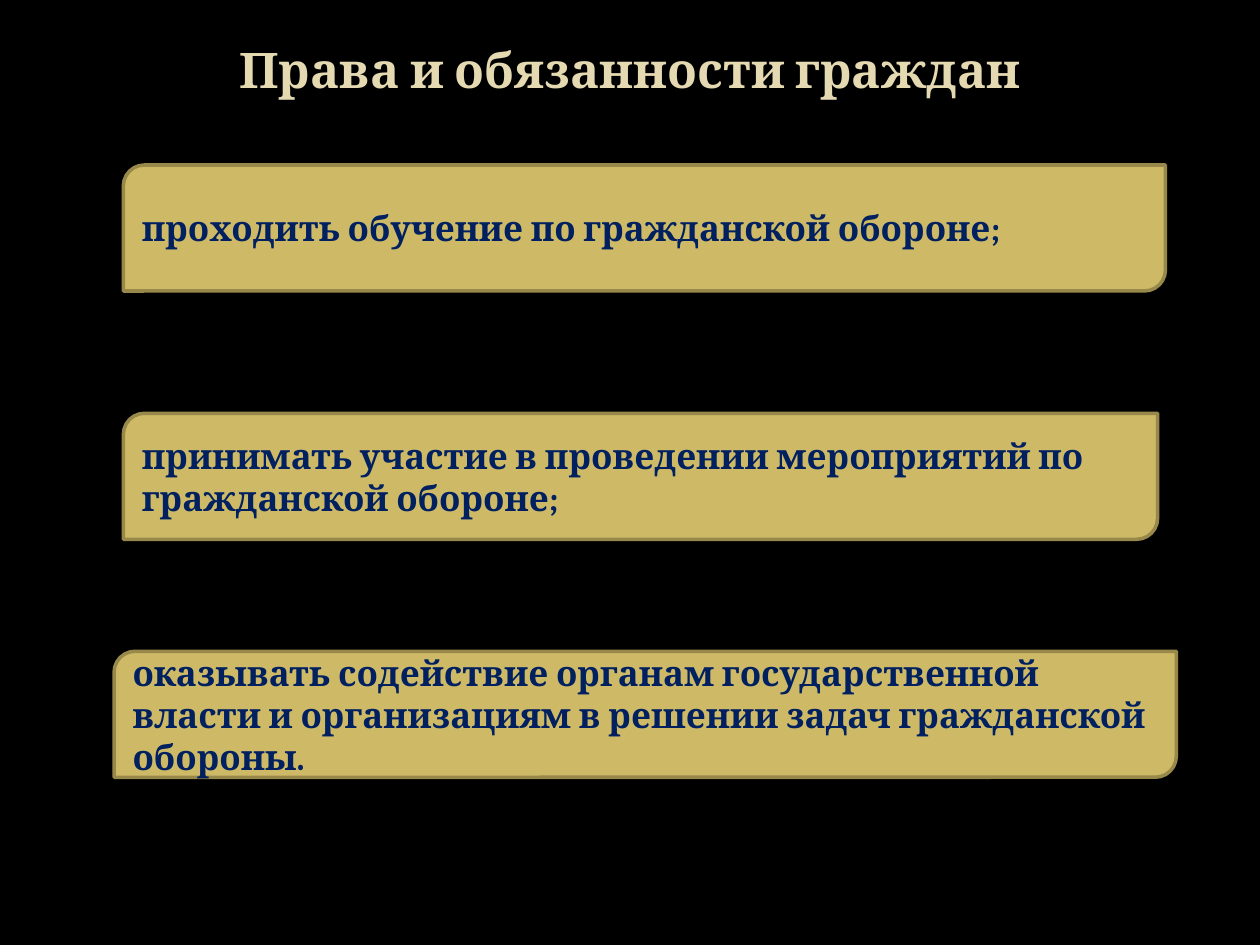
from pptx import Presentation
from pptx.dml.color import RGBColor
from pptx.enum import shapes, text
from pptx.util import Pt

BLACK = RGBColor(0x00, 0x00, 0x00)
CREAM = RGBColor(0xE4, 0xD9, 0xB0)
GOLD = RGBColor(0xCE, 0xB9, 0x66)
DARK_GOLD = RGBColor(0x98, 0x89, 0x4B)
NAVY = RGBColor(0x00, 0x20, 0x60)

HEADING = "Права и обязанности граждан"
DUTIES = [
    ("проходить обучение по гражданской обороне;", 70.5, 94.3, 595.5),
    ("принимать участие в проведении мероприятий по гражданской обороне;",
     70.5, 236.2, 591),
    ("оказывать содействие органам государственной власти и организациям "
     "в решении задач гражданской обороны.", 65.2, 372.2, 607),
]
DUTY_HEIGHT = 72
HEADING_FONT = {"name": "Cambria", "size": Pt(28), "bold": True}
DUTY_FONT = {"name": "Cambria", "size": Pt(20), "bold": True}


def write(frame, words, align, anchor, font_format, color):
    frame.word_wrap = True
    frame.vertical_anchor = anchor
    paragraph = frame.paragraphs[0]
    paragraph.alignment = align
    run = paragraph.add_run()
    run.text = words
    for key, value in font_format.items():
        setattr(run.font, key, value)
    run.font.color.rgb = color


def main():
    deck = Presentation()
    deck.slide_width, deck.slide_height = Pt(720), Pt(540)
    slide = deck.slides.add_slide(deck.slide_layouts[5])
    slide.background.fill.solid()
    slide.background.fill.fore_color.rgb = BLACK

    heading = slide.shapes.title
    heading.left, heading.top = Pt(0), Pt(18.7)
    heading.width, heading.height = Pt(720), Pt(41)
    heading.text_frame.auto_size = text.MSO_AUTO_SIZE.SHAPE_TO_FIT_TEXT
    write(heading.text_frame, HEADING, text.PP_ALIGN.CENTER,
          text.MSO_ANCHOR.TOP, HEADING_FONT, CREAM)

    for words, left, top, width in DUTIES:
        duty = slide.shapes.add_shape(
            shapes.MSO_SHAPE.ROUND_2_DIAG_RECTANGLE,
            Pt(left), Pt(top), Pt(width), Pt(DUTY_HEIGHT))
        duty.shadow.inherit = False
        duty.fill.solid()
        duty.fill.fore_color.rgb = GOLD
        duty.line.color.rgb = DARK_GOLD
        duty.line.width = Pt(2)
        write(duty.text_frame, words, text.PP_ALIGN.LEFT,
              text.MSO_ANCHOR.MIDDLE, DUTY_FONT, NAVY)

    deck.save("out.pptx")


if __name__ == "__main__":
    main()
